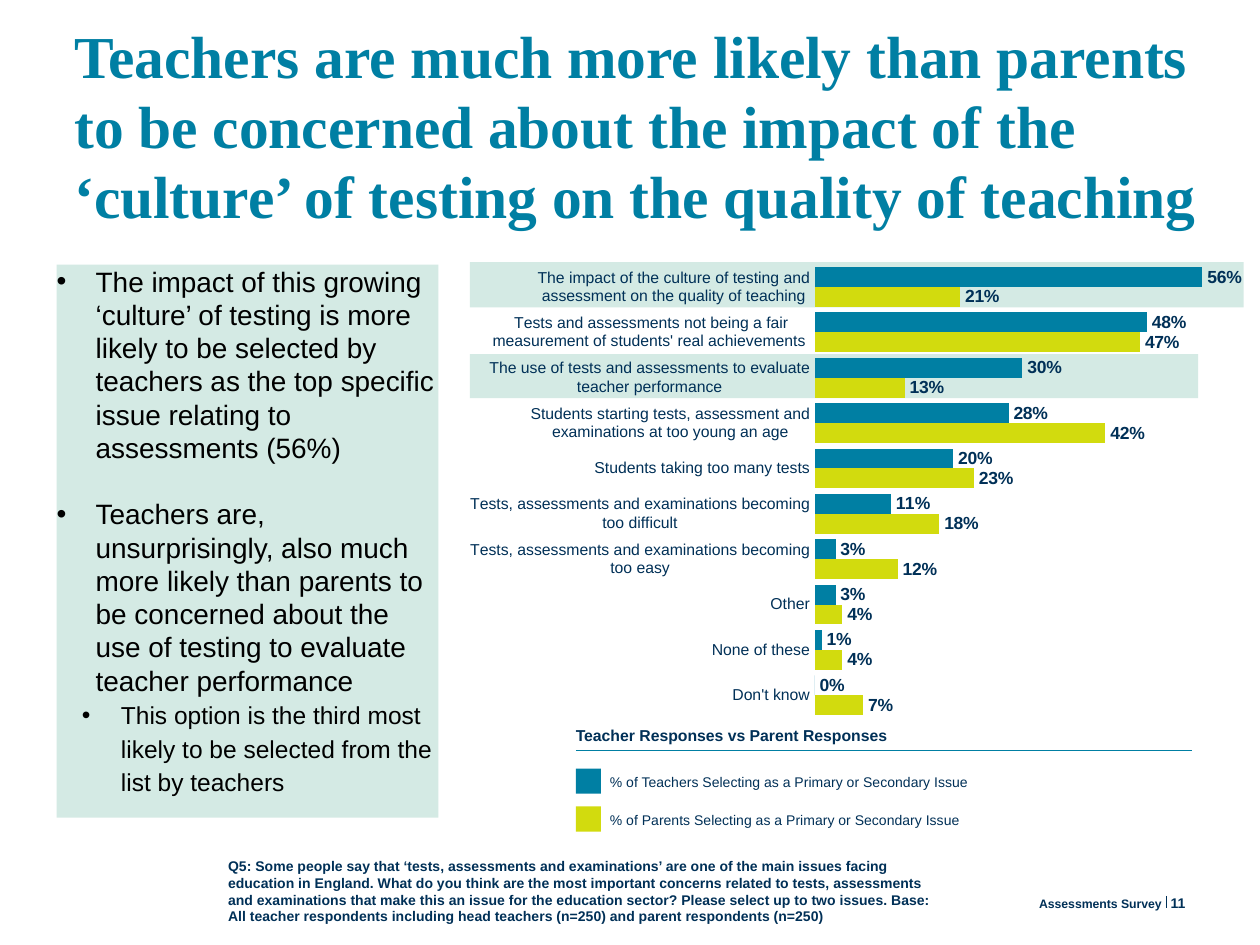
import pptx
import pptx.chart.data
import pptx.dml.color
import pptx.enum.chart
import pptx.enum.shapes
import pptx.enum.text
import pptx.oxml
import pptx.oxml.ns
import pptx.util
from lxml import etree
from pptx.util import Inches, Pt

COLORS = {"teal": "007FA3", "lime": "D2DB0E", "navy": "003057", "mint": "D4EAE4", "black": "000000"}
ANCHOR = pptx.enum.text.MSO_ANCHOR
ALIGN = pptx.enum.text.PP_ALIGN

TITLE = ("Teachers are much more likely than parents to be concerned about the impact "
         "of the ‘culture’ of testing on the quality of teaching")
FINDINGS = [
    ("The impact of this growing ‘culture’ of testing is more likely to be selected by teachers "
     "as the top specific issue relating to assessments (56%)", 0, 16, 0),
    ("Teachers are, unsurprisingly, also much more likely than parents to be concerned about "
     "the use of testing to evaluate teacher performance", 0, 16, 19),
    ("This option is the third most likely to be selected from the list by teachers", 1, 14, 0),
]
QUESTION = ("Q5: Some people say that ‘tests, assessments and examinations’ are one of the main issues "
            "facing education in England. What do you think are the most important concerns related to "
            "tests, assessments and examinations that make this an issue for the education sector? "
            "Please select up to two issues. Base: All teacher respondents including head teachers "
            "(n=250) and parent respondents (n=250)")
CONCERNS = [
    ("Don't know", 0.07, 0),
    ("None of these", 0.04, 0.01),
    ("Other", 0.04, 0.03),
    ("Tests, assessments and examinations becoming too easy", 0.12, 0.03),
    ("Tests, assessments and examinations becoming too difficult", 0.18, 0.11),
    ("Students taking too many tests", 0.23, 0.2),
    ("Students starting tests, assessment and examinations at too young an age", 0.42, 0.28),
    ("The use of tests and assessments to evaluate teacher performance", 0.13, 0.3),
    ("Tests and assessments not being a fair measurement of students' real achievements ", 0.47, 0.48),
    ("The impact of the culture of testing and assessment on the quality of teaching", 0.21, 0.56),
]
LEGEND = [("Teachers", "teal", 6.1), ("Parents", "lime", 6.4)]


def rgb(name):
    return pptx.dml.color.RGBColor.from_string(COLORS[name])


def style_font(font, size, color, bold=False, face="Arial"):
    font.name, font.size, font.bold = face, Pt(size), bold
    font.color.rgb = rgb(color)


def prepare_frame(frame, anchor=ANCHOR.TOP, wrap=True):
    frame.margin_left = frame.margin_right = frame.margin_top = frame.margin_bottom = 0
    frame.auto_size = pptx.enum.text.MSO_AUTO_SIZE.NONE
    frame.vertical_anchor = anchor
    frame.word_wrap = wrap


def add_label(slide, text, box, size, bold=False, anchor=ANCHOR.TOP, align=ALIGN.LEFT, wrap=True):
    frame = slide.shapes.add_textbox(*map(Inches, box)).text_frame
    prepare_frame(frame, anchor, wrap)
    paragraph = frame.paragraphs[0]
    paragraph.text = text
    paragraph.alignment = align
    style_font(paragraph.runs[0].font, size, "navy", bold)


def add_block(slide, box, color):
    block = slide.shapes.add_shape(pptx.enum.shapes.MSO_SHAPE.RECTANGLE, *map(Inches, box))
    block.shadow.inherit = False
    block.fill.solid()
    block.fill.fore_color.rgb = rgb(color)
    block.line.fill.background()


def add_rule(slide, start, end, color):
    rule = slide.shapes.add_connector(pptx.enum.shapes.MSO_CONNECTOR.STRAIGHT,
                                      *map(Inches, start + end))
    rule.line.color.rgb = rgb(color)
    rule.line.width = Pt(0.5)
    etree.SubElement(rule._element.spPr, pptx.oxml.ns.qn("a:effectLst"))


def set_title(slide):
    title = slide.shapes.title
    title.left, title.top, title.width, title.height = map(Inches, (0.59, 0.16, 9.17, 1.28))
    prepare_frame(title.text_frame)
    paragraph = title.text_frame.paragraphs[0]
    paragraph.text = TITLE
    paragraph.alignment = ALIGN.LEFT
    paragraph.line_spacing = Pt(40)
    style_font(paragraph.runs[0].font, 34, "teal", True, "Times New Roman")


def add_findings(slide):
    panel = slide.shapes.add_textbox(*map(Inches, (0.45, 2.1, 3.03, 4.39)))
    panel.fill.solid()
    panel.fill.fore_color.rgb = rgb("mint")
    frame = panel.text_frame
    prepare_frame(frame)
    for index, (text, level, size, gap) in enumerate(FINDINGS):
        paragraph = frame.add_paragraph() if index else frame.paragraphs[0]
        paragraph.text = text
        paragraph.level = level
        paragraph.line_spacing = Pt(19)
        paragraph.space_before = Pt(gap)
        properties = paragraph._p.get_or_add_pPr()
        properties.set("marL", str(Inches(0.31 + 0.2 * level)))
        properties.set("indent", str(Inches(-0.31)))
        etree.SubElement(properties, pptx.oxml.ns.qn("a:buFont")).set("typeface", "Arial")
        etree.SubElement(properties, pptx.oxml.ns.qn("a:buChar")).set("char", "•")
        style_font(paragraph.runs[0].font, size, "black")


def place_plot(chart, x, y, w, h):
    sizes = "".join(f'<c:{tag} val="{value}"/>' for tag, value in zip("xywh", (x, y, w, h)))
    layout = pptx.oxml.parse_xml(
        f'<c:layout {pptx.oxml.ns.nsdecls("c")}><c:manualLayout><c:layoutTarget val="inner"/>'
        f'<c:xMode val="edge"/><c:yMode val="edge"/>{sizes}</c:manualLayout></c:layout>')
    plot_area = chart._chartSpace.chart.plotArea
    for old_layout in plot_area.findall(pptx.oxml.ns.qn("c:layout")):
        plot_area.remove(old_layout)
    plot_area.insert(0, layout)
    clear_background = pptx.oxml.parse_xml(
        f'<c:spPr {pptx.oxml.ns.nsdecls("c", "a")}><a:noFill/><a:ln><a:noFill/></a:ln></c:spPr>')
    chart._chartSpace.chart.addnext(clear_background)


def add_concerns_chart(slide):
    categories, parents, teachers = zip(*CONCERNS)
    data = pptx.chart.data.CategoryChartData(number_format="0%")
    data.categories = categories
    data.add_series("Series 1", parents)
    data.add_series("Series 2", teachers)
    chart = slide.shapes.add_chart(pptx.enum.chart.XL_CHART_TYPE.BAR_CLUSTERED,
                                   *map(Inches, (3.68, 1.86, 6.22, 3.91)), data).chart
    style_font(chart.font, 18, "teal")
    chart.has_legend = chart.has_title = False
    place_plot(chart, 0.448, 0.061, 0.53, 0.921)

    category_axis, value_axis = chart.category_axis, chart.value_axis
    style_font(category_axis.tick_labels.font, 9, "navy")
    category_axis.format.line.fill.background()
    category_axis.major_tick_mark = pptx.enum.chart.XL_TICK_MARK.NONE
    value_axis.minimum_scale, value_axis.maximum_scale = 0, 0.6
    value_axis.has_major_gridlines = False
    value_axis.visible = False

    plot = chart.plots[0]
    plot.gap_width, plot.overlap, plot.vary_by_categories = 28, 0, False
    for series, color in zip(plot.series, ("lime", "teal")):
        series.format.fill.solid()
        series.format.fill.fore_color.rgb = rgb(color)
        series.invert_if_negative = False
        labels = series.data_labels
        labels.show_value = True
        labels.number_format, labels.number_format_is_linked = "0%", False
        labels.position = pptx.enum.chart.XL_LABEL_POSITION.OUTSIDE_END
        style_font(labels.font, 10, "navy", True)


def add_legend(slide):
    add_label(slide, "Teacher Responses vs Parent Responses", (4.57, 5.76, 2.5, 0.15), 9, True, wrap=False)
    add_rule(slide, (4.57, 5.96), (9.46, 5.96), "teal")
    for group, color, top in LEGEND:
        add_block(slide, (4.57, top, 0.2, 0.2), color)
        add_label(slide, f"% of {group} Selecting as a Primary or Secondary Issue",
                  (4.84, top + 0.04, 2.89, 0.13), 8, wrap=False)


def add_footer(slide):
    add_label(slide, QUESTION, (1.81, 7.21, 5.68, 0.13), 8, True, ANCHOR.BOTTOM)
    add_label(slide, "Assessments Survey", (6.88, 7.1, 2.34, 0.13), 7, True, ANCHOR.BOTTOM, ALIGN.RIGHT)
    add_rule(slide, (9.26, 7.11), (9.26, 7.21), "navy")
    add_label(slide, "11", (9.29, 7.1, 0.47, 0.14), 8, True, ANCHOR.MIDDLE)


def main():
    deck = pptx.Presentation()
    deck.slide_width, deck.slide_height = Inches(10), Inches(7.5)
    slide = deck.slides.add_slide(deck.slide_layouts[5])
    add_block(slide, (3.73, 2.08, 6.14, 0.36), "mint")
    add_block(slide, (3.73, 2.81, 5.78, 0.35), "mint")
    set_title(slide)
    add_findings(slide)
    add_concerns_chart(slide)
    add_legend(slide)
    add_footer(slide)
    deck.save("out.pptx")


if __name__ == "__main__":
    main()
